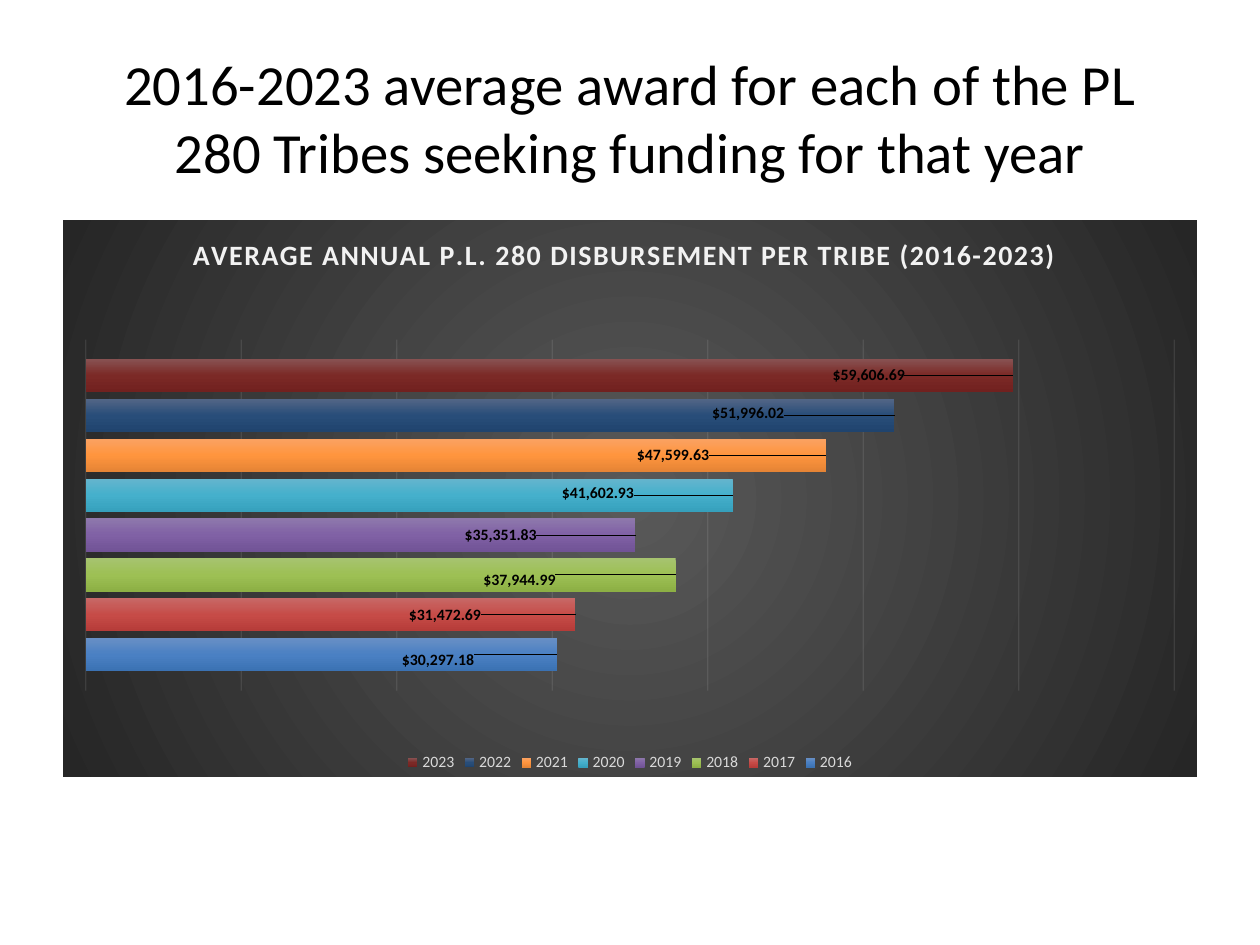
from pptx import Presentation
from pptx import util as u
from pptx.chart import data as chart_data
from pptx.dml.color import RGBColor
from pptx.enum import chart as chart_enum, text
from pptx.oxml import parse_xml
from pptx.oxml.ns import nsdecls

SCALE = 914400 / 126
FONT = "Calibri"
BLACK = RGBColor(0x00, 0x00, 0x00)
TITLE_WHITE = RGBColor(0xF2, 0xF2, 0xF2)
LEGEND_GREY = RGBColor(0xD9, 0xD9, 0xD9)
BACK_INNER = RGBColor(0x59, 0x59, 0x59)
BACK_OUTER = RGBColor(0x26, 0x26, 0x26)
MONEY = '"$"#,##0.00'
CHART_WIDTH, CHART_HEIGHT = 1134, 557

# year, award, gradient colours, label shift in px
AWARDS = [
    (2016, 30297.18, "688FC5 4A80C3 3B72B3", (-160, 5)),
    (2017, 31472.69, "C76967 C64B47 B63C39", (-171, 0)),
    (2018, 37944.99, "A6C36F 9DC054 8DB045", (-197, 5)),
    (2019, 35351.83, "8E78AC 8061A5 715396", (-176, 0)),
    (2020, 41602.93, "66B5CD 45B0CC 36A0BC", (-176, -2)),
    (2021, 47599.63, "FAA263 FF953E E58435", (-194, 0)),
    (2022, 51996.02, "536686 284D79 20446E", (-187, -2)),
    (2023, 59606.69, "885353 7B2926 71211F", (-185, 0)),
]


def px(length):
    return u.Emu(round(length * SCALE))


def style_font(font, size, color, bold=False):
    font.name = FONT
    font.size = u.Pt(size)
    font.bold = bold
    font.color.rgb = color


def write(frame, content, size, color, bold=False, spacing=0):
    para = frame.paragraphs[0]
    para.alignment = text.PP_ALIGN.CENTER
    span = para.add_run()
    span.text = content
    style_font(span.font, size, color, bold)
    if spacing:
        span._r.get_or_add_rPr().set("spc", str(spacing))


def gradient(colors, direction):
    step = 100000 // (len(colors) - 1)
    stops = "".join(
        f'<a:gs pos="{i * step}"><a:srgbClr val="{color}"/></a:gs>'
        for i, color in enumerate(colors)
    )
    return parse_xml(
        f'<a:gradFill {nsdecls("a")} rotWithShape="1">'
        f"<a:gsLst>{stops}</a:gsLst>{direction}</a:gradFill>"
    )


def manual_layout(x, y, size=None, edge=True):
    parts = []
    if size:
        parts.append(("layoutTarget", "inner"))
    if edge:
        parts += [("xMode", "edge"), ("yMode", "edge")]
    parts += [("x", x), ("y", y)]
    if size:
        parts += [("w", size[0]), ("h", size[1])]
    body = "".join(f'<c:{name} val="{value}"/>' for name, value in parts)
    return parse_xml(
        f'<c:layout {nsdecls("c")}><c:manualLayout>{body}</c:manualLayout></c:layout>'
    )


def place(parent, layout, index):
    for old in parent.xpath("c:layout"):
        parent.remove(old)
    parent.insert(index, layout)


def add_heading(page, content):
    box = page.shapes.add_textbox(px(63), px(38), px(1134), px(158))
    frame = box.text_frame
    frame.word_wrap = True
    frame.vertical_anchor = text.MSO_ANCHOR.MIDDLE
    write(frame, content, size=32.4, color=BLACK)


def style_series(series, colors, shift):
    series.format.fill.background()
    fill = series._element.spPr.xpath("a:noFill")[0]
    fill.getparent().replace(
        fill, gradient(colors.split(), '<a:lin ang="5400000" scaled="0"/>')
    )
    labels = series.data_labels
    labels.show_value = True
    labels.number_format = MONEY
    labels.number_format_is_linked = False
    style_font(labels.font, 9, BLACK, bold=True)
    label = series.points[0].data_label
    style_font(label.font, 9, BLACK, bold=True)
    label.position = chart_enum.XL_LABEL_POSITION.OUTSIDE_END
    x, y = shift
    offset = manual_layout(
        round(x / CHART_WIDTH, 3), round(y / CHART_HEIGHT, 3), edge=False
    )
    place(series._element.xpath("c:dLbls/c:dLbl")[0], offset, 1)


def style_axes(chart):
    chart.category_axis.visible = False
    axis = chart.value_axis
    axis.visible = False
    axis.minimum_scale, axis.maximum_scale, axis.major_unit = 0, 70000, 10000
    axis.has_major_gridlines = True
    line = axis.major_gridlines.format.line
    line.width = u.Pt(0.75)
    line.color.rgb = TITLE_WHITE
    color = axis._element.xpath("c:majorGridlines//a:srgbClr")[0]
    color.append(parse_xml(f'<a:alpha {nsdecls("a")} val="10000"/>'))


def fill_background(chart):
    properties = parse_xml(f'<c:spPr {nsdecls("c", "a")}><a:ln><a:noFill/></a:ln></c:spPr>')
    circle = '<a:path path="circle"><a:fillToRect l="50000" t="50000" r="50000" b="50000"/></a:path>'
    properties.insert(0, gradient([BACK_INNER, BACK_OUTER], circle))
    chart._chartSpace.chart.addnext(properties)


def add_award_chart(page):
    awards = chart_data.CategoryChartData(number_format=MONEY)
    awards.categories = ["1"]
    for year, value, _, _ in AWARDS:
        awards.add_series(str(year), [value])
    chart = page.shapes.add_chart(
        chart_enum.XL_CHART_TYPE.BAR_CLUSTERED,
        px(63), px(220), px(CHART_WIDTH), px(CHART_HEIGHT), awards,
    ).chart
    style_font(chart.font, 10, BLACK)
    fill_background(chart)

    chart.has_title = True
    write(
        chart.chart_title.text_frame,
        "AVERAGE ANNUAL P.L. 280 DISBURSEMENT PER TRIBE (2016-2023)",
        size=16, color=TITLE_WHITE, bold=True, spacing=100,
    )
    chart.chart_title.include_in_layout = False
    place(chart.chart_title._element, manual_layout(0.11, 0.02), 1)

    chart.has_legend = True
    chart.legend.position = chart_enum.XL_LEGEND_POSITION.BOTTOM
    chart.legend.include_in_layout = False
    style_font(chart.legend.font, 9, LEGEND_GREY)

    plot = chart.plots[0]
    plot.vary_by_categories = False
    plot.gap_width = 115
    plot.overlap = -20
    for series, (_, _, colors, shift) in zip(plot.series, AWARDS):
        style_series(series, colors, shift)
    style_axes(chart)
    area = chart._chartSpace.chart.plotArea
    place(area, manual_layout(0.02, 0.215, size=(0.96, 0.63)), 0)


def main():
    deck = Presentation()
    deck.slide_width, deck.slide_height = px(1260), px(945)
    page = deck.slides.add_slide(deck.slide_layouts[6])
    add_heading(
        page,
        "2016-2023 average award for each of the PL 280 Tribes seeking funding for that year",
    )
    add_award_chart(page)
    deck.save("out.pptx")


if __name__ == "__main__":
    main()
